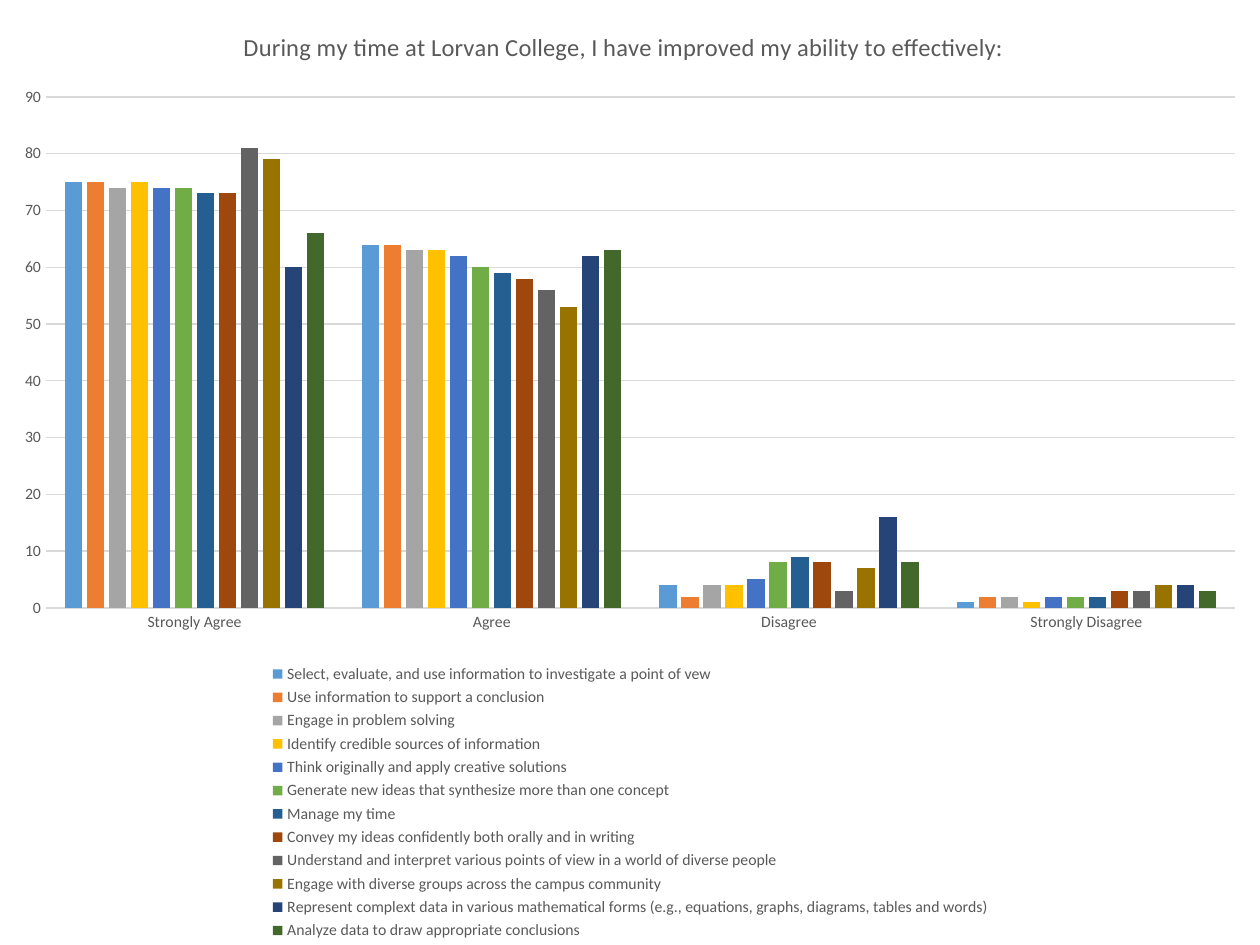
from lxml import etree
from pptx import Presentation
from pptx import util as u
from pptx.chart.data import CategoryChartData
from pptx.dml.color import RGBColor
from pptx.enum import chart as charts
from pptx.oxml.ns import qn

EMU_PER_PX = 914400 / 126
WIDTH, HEIGHT = 1260, 945
FONT = "Calibri"
TEXT, RULE = "595959", "D9D9D9"
TITLE = "During my time at Lorvan College, I have improved my ability to effectively:"
RATINGS = ["Strongly Agree", "Agree", "Disagree", "Strongly Disagree"]
SKILLS = [
    ("Select, evaluate, and use information to investigate a point of vew", (75, 64, 4, 1), "5B9BD5"),
    ("Use information to support a conclusion", (75, 64, 2, 2), "ED7D31"),
    ("Engage in problem solving", (74, 63, 4, 2), "A5A5A5"),
    ("Identify credible sources of information", (75, 63, 4, 1), "FFC000"),
    ("Think originally and apply creative solutions", (74, 62, 5, 2), "4472C4"),
    ("Generate new ideas that synthesize more than one concept", (74, 60, 8, 2), "70AD47"),
    ("Manage my time", (73, 59, 9, 2), "255E91"),
    ("Convey my ideas confidently both orally and in writing", (73, 58, 8, 3), "9E480E"),
    ("Understand and interpret various points of view in a world of diverse people",
     (81, 56, 3, 3), "636363"),
    ("Engage with diverse groups across the campus community", (79, 53, 7, 4), "997300"),
    ("Represent complext data in various mathematical forms "
     "(e.g., equations, graphs, diagrams, tables and words)", (60, 62, 16, 4), "264478"),
    ("Analyze data to draw appropriate conclusions", (66, 63, 8, 3), "43682B"),
]


def px(length):
    return u.Emu(round(length * EMU_PER_PX))


def color(value):
    return RGBColor.from_string(value)


def style_font(font, size, value=TEXT):
    font.name = FONT
    font.size = u.Pt(size)
    font.bold = False
    font.color.rgb = color(value)


def style_line(line):
    line.color.rgb = color(RULE)
    line.width = u.Pt(0.75)


def place(element, left, top, width=None, height=None, inner=False):
    for previous in element.findall(qn("c:layout")):
        element.remove(previous)
    layout = etree.Element(qn("c:layout"))
    manual = etree.SubElement(layout, qn("c:manualLayout"))
    settings = [("layoutTarget", "inner")] if inner else []
    settings += [("xMode", "edge"), ("yMode", "edge")]
    settings += [("x", left / WIDTH), ("y", top / HEIGHT)]
    if width:
        settings += [("w", width / WIDTH), ("h", height / HEIGHT)]
    for name, value in settings:
        etree.SubElement(manual, qn(f"c:{name}")).set("val", str(value))
    element.insert(0 if inner else 1, layout)


def add_title(chart):
    chart.has_title = True
    chart.chart_title.include_in_layout = False
    paragraph = chart.chart_title.text_frame.paragraphs[0]
    paragraph.text = TITLE
    style_font(paragraph.font, 14)


def add_legend(chart):
    chart.has_legend = True
    chart.legend.position = charts.XL_LEGEND_POSITION.BOTTOM
    chart.legend.include_in_layout = False
    style_font(chart.legend.font, 9)


def style_axes(chart):
    for axis in (chart.category_axis, chart.value_axis):
        axis.major_tick_mark = axis.minor_tick_mark = charts.XL_TICK_MARK.NONE
        style_font(axis.tick_labels.font, 9)
    style_line(chart.category_axis.format.line)
    values = chart.value_axis
    values.minimum_scale, values.maximum_scale, values.major_unit = 0, 90, 10
    values.format.line.fill.background()
    values.has_major_gridlines = True
    style_line(values.major_gridlines.format.line)


def style_columns(chart):
    plot = chart.plots[0]
    plot.gap_width = 219
    plot.overlap = -27
    plot.vary_by_categories = False
    for series, (_, _, fill) in zip(plot.series, SKILLS):
        series.format.fill.solid()
        series.format.fill.fore_color.rgb = color(fill)
        series.invert_if_negative = False


def add_survey_chart(slide):
    data = CategoryChartData()
    data.categories = RATINGS
    for name, values, _ in SKILLS:
        data.add_series(name, values)
    chart = slide.shapes.add_chart(
        charts.XL_CHART_TYPE.COLUMN_CLUSTERED, 0, 0, px(WIDTH), px(HEIGHT), data
    ).chart
    style_font(chart.font, 10, "000000")
    add_title(chart)
    add_legend(chart)
    style_axes(chart)
    style_columns(chart)
    root = chart.element.find(qn("c:chart"))
    place(root.find(qn("c:title")), 239, 25)
    place(root.find(qn("c:plotArea")), 46, 97, 1189, 511, inner=True)
    place(root.find(qn("c:legend")), 268, 660, 724, 285)


def main():
    presentation = Presentation()
    presentation.slide_width = px(WIDTH)
    presentation.slide_height = px(HEIGHT)
    slide = presentation.slides.add_slide(presentation.slide_layouts[6])
    add_survey_chart(slide)
    presentation.save("out.pptx")


if __name__ == "__main__":
    main()
